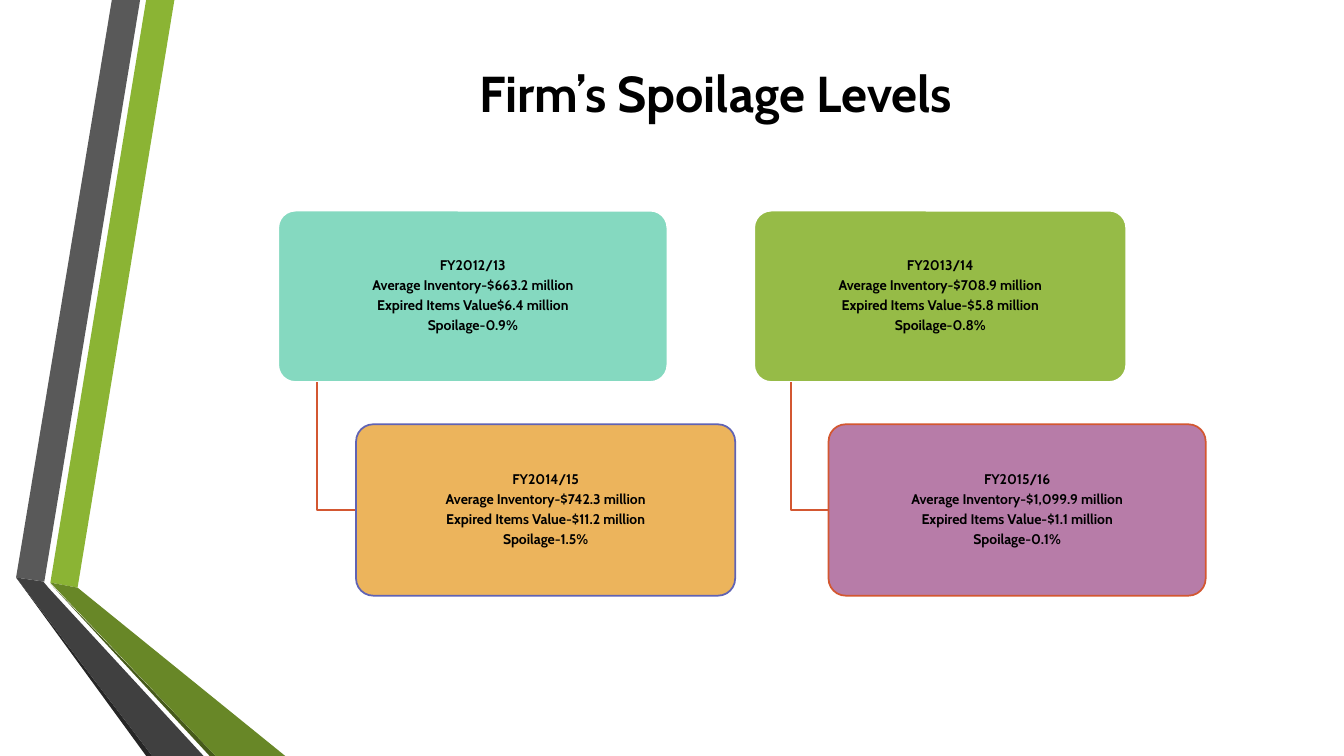
import pptx
import pptx.util
import pptx.dml.color
import pptx.enum.shapes
import pptx.enum.text
import pptx.oxml.ns
from dataclasses import dataclass
from lxml import etree
from pptx.util import Inches

TITLE = "Firm’s Spoilage Levels"

# Each column: left, then (width, fill, line, text) for its upper and lower box
COLUMNS = [
    (2.76,
     (3.86, "78D5BA", "FFFFFF", [
         "FY2012/13", "Average Inventory-$663.2 million",
         "Expired Items Value$6.4 million", "Spoilage-0.9%"]),
     (3.76, "EBAC4B", "6063B4", [
         "FY2014/15", "Average Inventory-$742.3 million",
         "Expired Items Value-$11.2 million", "Spoilage-1.5%"])),
    (7.48,
     (3.69, "8BB434", "FFFFFF", [
         "FY2013/14", "Average Inventory-$708.9 million",
         "Expired Items Value-$5.8 million", "Spoilage-0.8%"]),
     (3.74, "B06E9F", "D35731", [
         "FY2015/16", "Average Inventory-$1,099.9 million",
         "Expired Items Value-$1.1 million", "Spoilage-0.1%"])),
]

# Ribbon facets, back to front: fill and corner points
RIBBONS = [
    ("8BB434", [(0.5, 5.78), (0.77, 5.83), (1.73, 0), (1.45, 0)]),
    ("595959", [(1.39, 0), (1.11, 0), (0.16, 5.73), (0.44, 5.77)]),
    ("262626", [(0.16, 5.73), (1.45, 7.5), (1.51, 7.5)]),
    ("465A1A", [(0.5, 5.79), (2.08, 7.5), (2.14, 7.5)]),
    ("688727", [(0.5, 5.78), (2.14, 7.5), (2.83, 7.5), (0.77, 5.83)]),
    ("404040", [(2.02, 7.5), (0.48, 5.83), (0.43, 5.77), (0.16, 5.73),
                (1.51, 7.5)]),
]


@dataclass
class Theme:
    font: str = "Cabin"
    ink: str = "000000"
    link: str = "D35731"
    title: float = 36
    body: float = 10
    rule: float = 1.25
    alpha: int = 90


THEME = Theme()
TOP, HIGH, GAP = 2.09, 1.7, 0.42
INDENT = 0.2  # lower box offset, as a share of the upper box width


def color(code):
    return pptx.dml.color.RGBColor.from_string(code)


def write(frame, lines, size, spacing=1.0, after=0, inset=(0.02, 0.01)):
    side, edge = map(Inches, inset)
    frame.margin_left = frame.margin_right = side
    frame.margin_top = frame.margin_bottom = edge
    frame.word_wrap = True
    frame.auto_size = pptx.enum.text.MSO_AUTO_SIZE.NONE
    frame.vertical_anchor = pptx.enum.text.MSO_ANCHOR.MIDDLE
    for i, line in enumerate(lines):
        para = frame.add_paragraph() if i else frame.paragraphs[0]
        para.alignment = pptx.enum.text.PP_ALIGN.CENTER
        para.line_spacing = spacing
        para.space_before = pptx.util.Pt(0)
        para.space_after = pptx.util.Pt(after)
        run = para.add_run()
        run.text = line
        run.font.name = THEME.font
        run.font.size = pptx.util.Pt(size)
        run.font.bold = True
        run.font.color.rgb = color(THEME.ink)


def paint(shape, fill=None, line=None):
    shape.shadow.inherit = False
    if fill:
        shape.fill.solid()
        shape.fill.fore_color.rgb = color(fill)
    else:
        shape.fill.background()
    if line:
        shape.line.color.rgb = color(line)
        shape.line.width = pptx.util.Pt(THEME.rule)
    else:
        shape.line.fill.background()


def fade(shape):
    """Make the solid fill slightly transparent."""
    qn = pptx.oxml.ns.qn
    tone = shape.fill._xPr.find(qn("a:solidFill"))[0]
    etree.SubElement(tone, qn("a:alpha"), val=str(THEME.alpha * 1000))


def trace(slide, points, close=True, **look):
    dots = [(Inches(x), Inches(y)) for x, y in points]
    pen = slide.shapes.build_freeform(*dots[0], scale=1.0)
    pen.add_line_segments(dots[1:], close=close)
    paint(pen.convert_to_shape(), **look)


def add_box(slide, left, top, box):
    width, fill, line, text = box
    shape = slide.shapes.add_shape(
        pptx.enum.shapes.MSO_SHAPE.ROUNDED_RECTANGLE,
        Inches(left), Inches(top), Inches(width), Inches(HIGH))
    shape.adjustments[0] = 0.1
    paint(shape, fill=fill, line=line)
    fade(shape)
    write(shape.text_frame, text, THEME.body, spacing=0.9,
          after=0.35 * THEME.body)


def add_column(slide, left, upper, lower):
    step = INDENT * upper[0]
    base = TOP + HIGH
    low = base + GAP
    stem, mid = left + step / 2, low + HIGH / 2
    add_box(slide, left, TOP, upper)
    trace(slide, [(stem, base), (stem, mid), (left + step, mid)],
          close=False, line=THEME.link)
    add_box(slide, left + step, low, lower)


def main():
    deck = pptx.Presentation()
    deck.slide_width, deck.slide_height = Inches(13.33), Inches(7.5)
    slide = deck.slides.add_slide(deck.slide_layouts[5])
    title = slide.shapes.title
    title.left, title.top = Inches(1.62), Inches(0.58)
    title.width, title.height = Inches(10.96), Inches(0.68)
    write(title.text_frame, [TITLE], THEME.title, inset=(0.1, 0.05))
    for fill, points in RIBBONS:
        trace(slide, points, fill=fill)
    for column in COLUMNS:
        add_column(slide, *column)
    deck.save("out.pptx")


if __name__ == "__main__":
    main()
